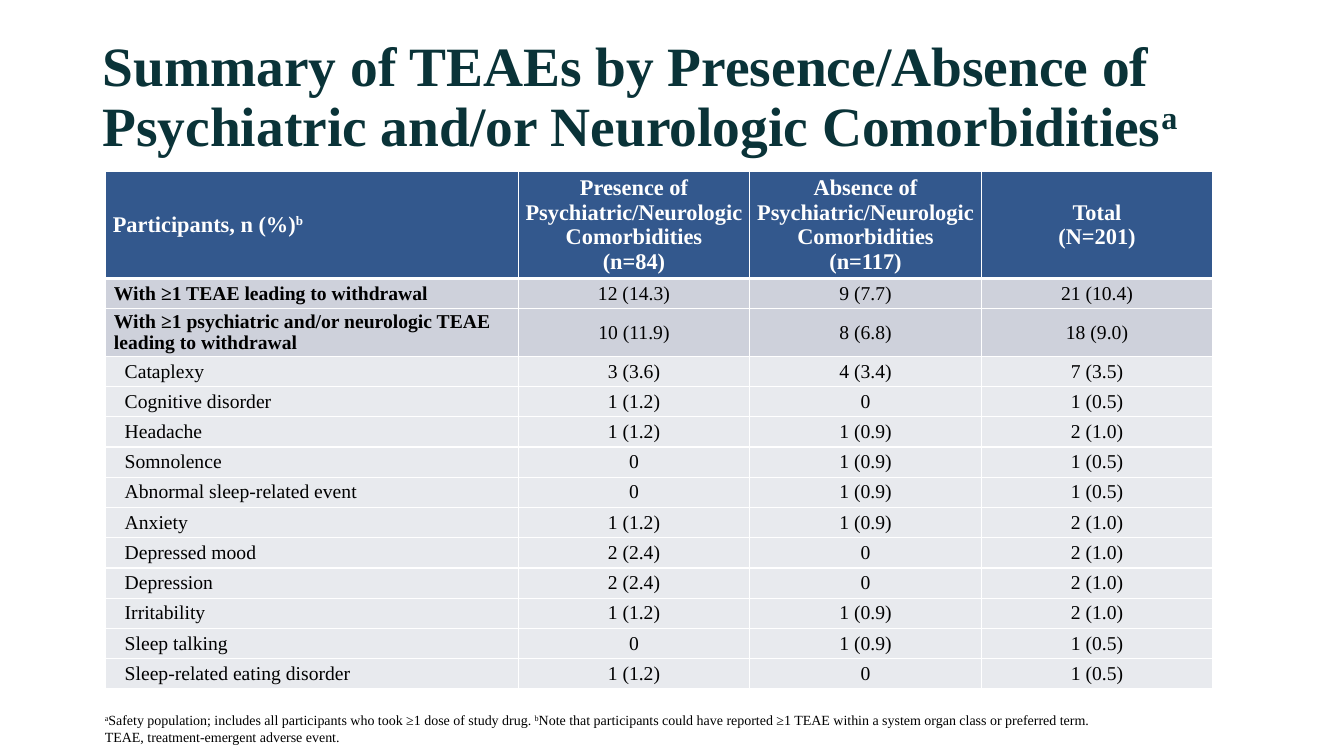
from lxml import etree
from pptx import Presentation
from pptx.dml.color import RGBColor
from pptx.enum.text import MSO_ANCHOR, MSO_AUTO_SIZE, PP_ALIGN
from pptx.oxml.ns import qn
from pptx.util import Pt

LEFT, CENTER = PP_ALIGN.LEFT, PP_ALIGN.CENTER
MIDDLE, TOP = MSO_ANCHOR.MIDDLE, MSO_ANCHOR.TOP
NO_AUTOFIT = MSO_AUTO_SIZE.NONE
TITLE_ONLY = 5
FONT = "Times New Roman"
COLORS = {
    "title": "0A3338",
    "text": "000000",
    "white": "FFFFFF",
    "header": "33588D",
    "summary": "CED1DB",
    "detail": "E8EAEE",
}

TITLE = ("Summary of TEAEs by Presence/Absence of "
         "Psychiatric and/or Neurologic Comorbidities^a^")
FOOTNOTES = (
    "^a^Safety population; includes all participants who took ≥1 dose of study drug. "
    "^b^Note that participants could have reported ≥1 TEAE within a system organ class "
    "or preferred term.\n"
    "TEAE, treatment-emergent adverse event."
)
HEADERS = (
    "Participants, n (%)^b^",
    "Presence of Psychiatric/Neurologic Comorbidities\n(n=84)",
    "Absence of Psychiatric/Neurologic Comorbidities\n(n=117)",
    "Total\n(N=201)",
)
SUMMARY_ROWS = (
    ("With ≥1 TEAE leading to withdrawal", "12 (14.3)", "9 (7.7)", "21 (10.4)"),
    ("With ≥1 psychiatric and/or neurologic TEAE leading to withdrawal",
     "10 (11.9)", "8 (6.8)", "18 (9.0)"),
)
DETAIL_ROWS = (
    ("Cataplexy", "3 (3.6)", "4 (3.4)", "7 (3.5)"),
    ("Cognitive disorder", "1 (1.2)", "0", "1 (0.5)"),
    ("Headache", "1 (1.2)", "1 (0.9)", "2 (1.0)"),
    ("Somnolence", "0", "1 (0.9)", "1 (0.5)"),
    ("Abnormal sleep-related event", "0", "1 (0.9)", "1 (0.5)"),
    ("Anxiety", "1 (1.2)", "1 (0.9)", "2 (1.0)"),
    ("Depressed mood", "2 (2.4)", "0", "2 (1.0)"),
    ("Depression", "2 (2.4)", "0", "2 (1.0)"),
    ("Irritability", "1 (1.2)", "1 (0.9)", "2 (1.0)"),
    ("Sleep talking", "0", "1 (0.9)", "1 (0.5)"),
    ("Sleep-related eating disorder", "1 (1.2)", "0", "1 (0.5)"),
)
COLUMN_WIDTHS = (294.6, 165.4, 165.4, 165.4)
HEADER_HEIGHT, ROW_HEIGHT, TWO_LINE_HEIGHT = 76.5, 21.6, 34


def write_text(frame, text, size, color, bold=False, align=LEFT, line_spacing=None):
    lines = text.split("\n")
    frame.text = "\n".join("" for line in lines)
    for para, line in zip(frame.paragraphs, lines):
        para.alignment = align
        if line_spacing:
            para.line_spacing = line_spacing
        for index, part in enumerate(line.split("^")):
            if not part:
                continue
            span = para.add_run()
            span.text = part
            span.font.name = FONT
            span.font.size = Pt(size)
            span.font.bold = bold
            span.font.color.rgb = RGBColor.from_string(COLORS[color])
            if index % 2:
                span._r.get_or_add_rPr().set("baseline", "30000")


def set_borders(cell, top, bottom):
    properties = cell._tc.get_or_add_tcPr()
    for tag, width in (("a:lnL", 1), ("a:lnR", 1), ("a:lnT", top), ("a:lnB", bottom)):
        line = etree.SubElement(properties, qn(tag), w=str(Pt(width)))
        fill = etree.SubElement(line, qn("a:solidFill"))
        etree.SubElement(fill, qn("a:srgbClr"), val=COLORS["white"])


def style_cell(cell, fill, margin, top=1, bottom=1):
    set_borders(cell, top, bottom)
    cell.fill.solid()
    cell.fill.fore_color.rgb = RGBColor.from_string(COLORS[fill])
    cell.vertical_anchor = MIDDLE
    cell.margin_left = cell.margin_right = Pt(margin)
    cell.margin_top = cell.margin_bottom = 0


def add_title(page, left, top, width, height):
    box = page.shapes.title
    box.left, box.top, box.width, box.height = Pt(left), Pt(top), Pt(width), Pt(height)
    frame = box.text_frame
    frame.word_wrap = True
    frame.auto_size = NO_AUTOFIT
    frame.vertical_anchor = MIDDLE
    write_text(frame, TITLE, 39.6, "title", bold=True, line_spacing=0.9)


def add_event_table(page, left, top):
    rows = (HEADERS,) + SUMMARY_ROWS + DETAIL_ROWS
    heights = [HEADER_HEIGHT, ROW_HEIGHT, TWO_LINE_HEIGHT] + [ROW_HEIGHT] * len(DETAIL_ROWS)
    table = page.shapes.add_table(
        len(rows), len(HEADERS), Pt(left), Pt(top),
        Pt(sum(COLUMN_WIDTHS)), Pt(sum(heights))).table
    for column, width in zip(table.columns, COLUMN_WIDTHS):
        column.width = Pt(width)
    for row_index, (values, height) in enumerate(zip(rows, heights)):
        table.rows[row_index].height = Pt(height)
        is_header = row_index == 0
        is_summary = 1 <= row_index <= len(SUMMARY_ROWS)
        fill = "header" if is_header else "summary" if is_summary else "detail"
        for column_index, value in enumerate(values):
            cell = table.cell(row_index, column_index)
            is_label = column_index == 0
            if is_header:
                margin = 5
            elif is_label:
                margin = 5.8 if is_summary else 13.5
            else:
                margin = 0
            style_cell(cell, fill, margin,
                       top=3 if row_index == 1 else 1, bottom=3 if is_header else 1)
            write_text(cell.text_frame, value,
                       16 if is_header else 14,
                       "white" if is_header else "text",
                       bold=is_header or (is_summary and is_label),
                       align=LEFT if is_label else CENTER)


def add_footnotes(page, left, top, width, height):
    frame = page.shapes.add_textbox(Pt(left), Pt(top), Pt(width), Pt(height)).text_frame
    frame.word_wrap = True
    frame.vertical_anchor = TOP
    write_text(frame, FOOTNOTES, 10, "text")


def main():
    deck = Presentation()
    deck.slide_width, deck.slide_height = Pt(960), Pt(540)
    page = deck.slides.add_slide(deck.slide_layouts[TITLE_ONLY])
    add_title(page, 66, 18, 828, 104.4)
    add_event_table(page, 75.6, 122.4)
    add_footnotes(page, 67.8, 504.7, 890.6, 31.7)
    deck.save("out.pptx")


if __name__ == "__main__":
    main()
